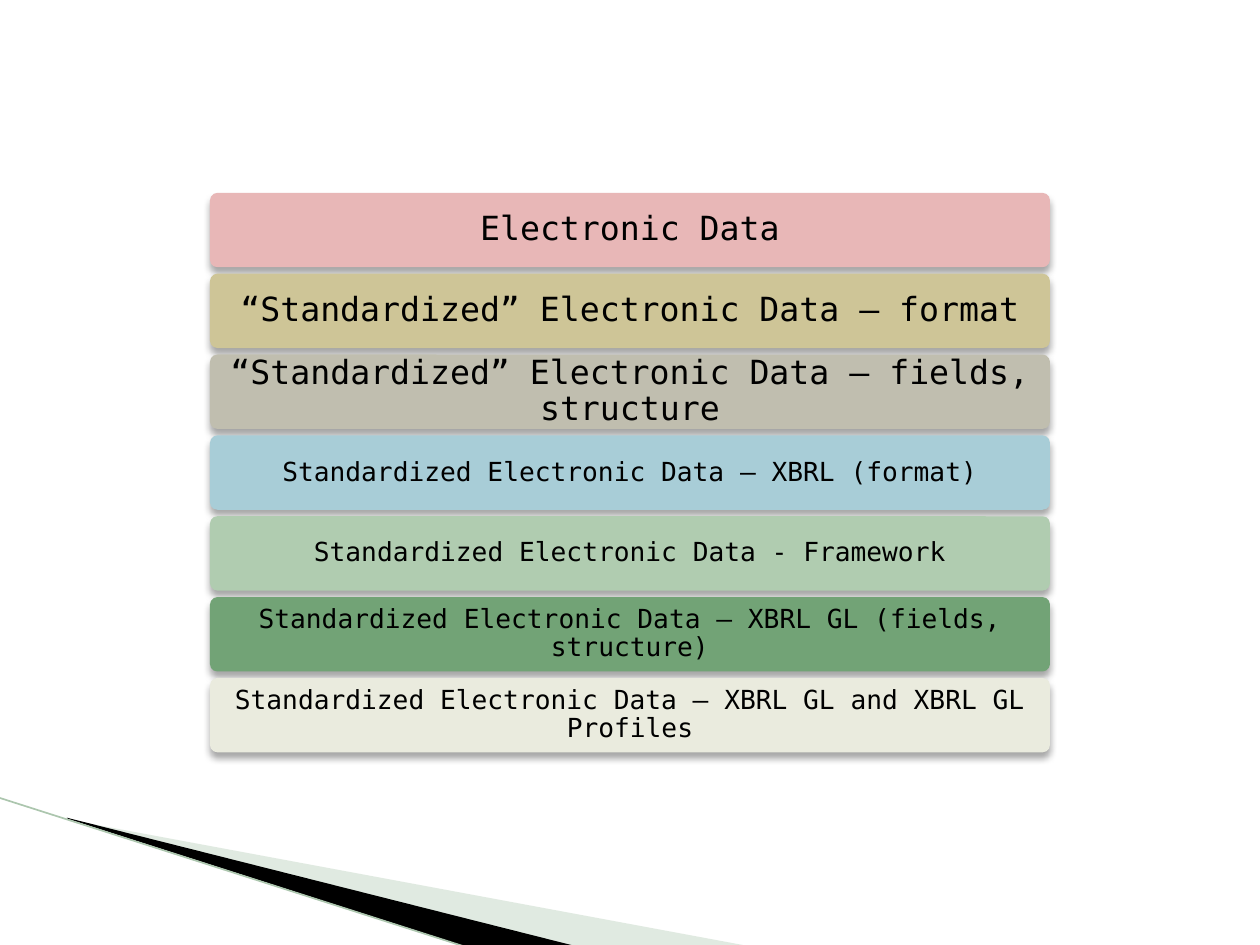
import lxml.etree
import pptx
import pptx.dml.color
import pptx.enum.shapes
import pptx.enum.text
import pptx.oxml.ns
import pptx.util

Pt = pptx.util.Pt
RGBColor = pptx.dml.color.RGBColor
qn = pptx.oxml.ns.qn

BLACK = RGBColor(0x00, 0x00, 0x00)
PALE_GREEN = RGBColor(0xB3, 0xCB, 0xB5)
EDGE_GREEN = RGBColor(0xAC, 0xC6, 0xAE)
ROSE = RGBColor(0xE8, 0xB7, 0xB7)
SAND = RGBColor(0xCE, 0xC5, 0x97)
STONE = RGBColor(0xC0, 0xBE, 0xAF)
SKY = RGBColor(0xA8, 0xCD, 0xD7)
LIGHT_GREEN = RGBColor(0xB0, 0xCC, 0xB0)
GREEN = RGBColor(0x72, 0xA3, 0x76)
IVORY = RGBColor(0xEA, 0xEB, 0xDE)

BAR_LEFT, BAR_TOP = 120, 110.2
BAR_WIDTH, BAR_HEIGHT, BAR_STEP = 480, 42.5, 46.2

# Text, fill, font size and inset of each level, from top to bottom
LEVELS = [
    ("Electronic Data", ROSE, 19, 5.7),
    ("“Standardized” Electronic Data – format", SAND, 19, 5.7),
    ("“Standardized” Electronic Data – fields, structure", STONE, 19, 5.7),
    ("Standardized Electronic Data – XBRL (format)", SKY, 15, 4.5),
    ("Standardized Electronic Data - Framework", LIGHT_GREEN, 15, 4.5),
    ("Standardized Electronic Data – XBRL GL (fields, structure)", GREEN, 15, 4.5),
    ("Standardized Electronic Data – XBRL GL and XBRL GL Profiles", IVORY, 15, 4.5),
]

# Corner points, colour and opacity in percent of the bottom wedges
WEDGES = [
    ([(39.6, 468.5), (428.4, 540.7), (328.3, 540.7), (39.6, 468)], PALE_GREEN, 40),
    ([(38.2, 467.3), (329, 540.7), (267.8, 541.4), (38.9, 468)], BLACK, 100),
]


def set_opacity(color_element, percent):
    alpha = lxml.etree.SubElement(color_element, qn("a:alpha"))
    alpha.set("val", str(percent * 1000))


def add_drop_shadow(shape):
    shape.shadow.inherit = False
    effects = shape._element.spPr.find(qn("a:effectLst"))
    shadow = lxml.etree.SubElement(effects, qn("a:outerShdw"))
    settings = {"blurRad": Pt(4), "dist": Pt(3), "dir": 90 * 60000, "rotWithShape": 0}
    for name, value in settings.items():
        shadow.set(name, str(int(value)))
    color = lxml.etree.SubElement(shadow, qn("a:srgbClr"))
    color.set("val", str(BLACK))
    set_opacity(color, 35)


presentation = pptx.Presentation()
presentation.slide_width, presentation.slide_height = Pt(720), Pt(540)
slide = presentation.slides.add_slide(presentation.slide_layouts[6])

for corners, color, opacity in WEDGES:
    points = [(Pt(x), Pt(y)) for x, y in corners]
    builder = slide.shapes.build_freeform(*points[0])
    builder.add_line_segments(points[1:], close=True)
    wedge = builder.convert_to_shape()
    wedge.shadow.inherit = False
    wedge.line.fill.background()
    wedge.fill.solid()
    wedge.fill.fore_color.rgb = color
    if opacity < 100:
        set_opacity(wedge._element.spPr.find(".//" + qn("a:srgbClr")), opacity)

edge = slide.shapes.add_connector(
    pptx.enum.shapes.MSO_CONNECTOR.STRAIGHT, Pt(-0.7), Pt(455.8), Pt(267.1), Pt(541.4))
edge.line.color.rgb = EDGE_GREEN
edge.line.width = Pt(0.95)
lxml.etree.SubElement(edge._element.spPr, qn("a:effectLst"))

for row, (text, color, size, inset) in enumerate(LEVELS):
    bar = slide.shapes.add_shape(
        pptx.enum.shapes.MSO_SHAPE.ROUNDED_RECTANGLE,
        Pt(BAR_LEFT), Pt(BAR_TOP + row * BAR_STEP), Pt(BAR_WIDTH), Pt(BAR_HEIGHT))
    bar.adjustments[0] = 0.1
    bar.fill.solid()
    bar.fill.fore_color.rgb = color
    bar.line.fill.background()
    add_drop_shadow(bar)

    frame = bar.text_frame
    frame_format = {"word_wrap": True, "vertical_anchor": pptx.enum.text.MSO_ANCHOR.MIDDLE}
    for side in ("left", "top", "right", "bottom"):
        frame_format["margin_" + side] = Pt(inset)
    for name, value in frame_format.items():
        setattr(frame, name, value)

    paragraph = frame.paragraphs[0]
    paragraph.alignment = pptx.enum.text.PP_ALIGN.CENTER
    paragraph.line_spacing = 0.9
    run = paragraph.add_run()
    run.text = text
    for name, value in {"name": "DejaVu Sans Mono", "size": Pt(size)}.items():
        setattr(run.font, name, value)
    run.font.color.rgb = BLACK

presentation.save("out.pptx")
